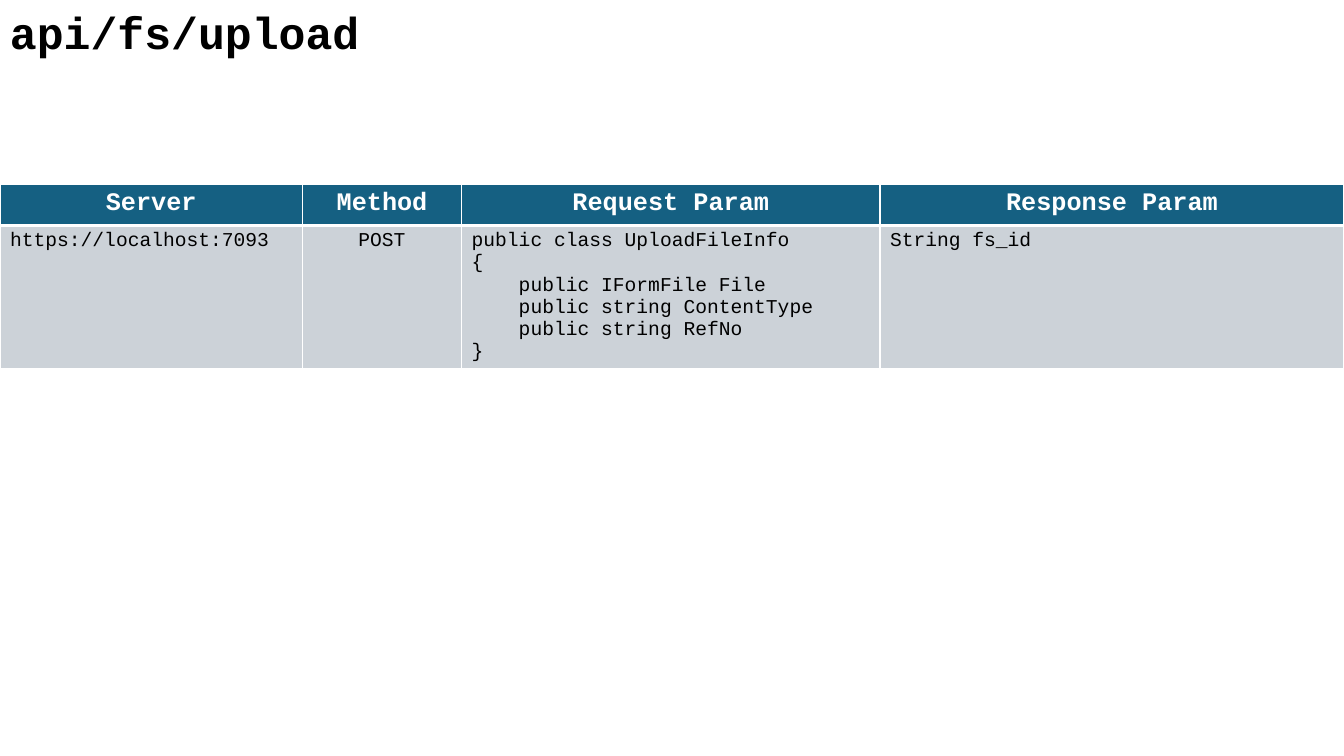
from lxml.etree import SubElement
from pptx import Presentation
from pptx.dml.color import RGBColor
from pptx.enum.text import MSO_AUTO_SIZE, PP_ALIGN
from pptx.oxml.ns import qn
from pptx.util import Pt

FONT = "Courier New"
COLORS = {"header": "156082", "body": "CCD2D8", "white": "FFFFFF", "black": "000000"}
COLUMN_WIDTHS = [216, 113.75, 298.8, 331.45]
ROW_HEIGHTS = [29.2, 102]
HEADINGS = ["Server", "Method", "Request Param", "Response Param"]
UPLOAD_CLASS = [
    "public class UploadFileInfo",
    "{",
    "    public IFormFile File",
    "    public string ContentType",
    "    public string RefNo",
    "}",
]
ENDPOINT = [["https://localhost:7093"], ["POST"], UPLOAD_CLASS, ["String fs_id"]]
METHOD_COLUMN = HEADINGS.index("Method")


def write_lines(frame, lines, size, color, bold=False, align=PP_ALIGN.LEFT):
    for index, line in enumerate(lines):
        para = frame.add_paragraph() if index else frame.paragraphs[0]
        para.alignment = align
        span = para.add_run()
        span.text = line
        span.font.name = FONT
        span.font.size = Pt(size)
        span.font.bold = bold
        span.font.color.rgb = RGBColor.from_string(COLORS[color])


def set_borders(cell, bottom):
    """Give a cell white 1 pt borders and a bottom border of its own width."""
    properties = cell._tc.get_or_add_tcPr()
    for side, width in (("L", 1), ("R", 1), ("T", 1), ("B", bottom)):
        line = SubElement(properties, qn(f"a:ln{side}"), w=str(Pt(width)))
        fill = SubElement(line, qn("a:solidFill"))
        SubElement(fill, qn("a:srgbClr"), val=COLORS["white"])


def fill_cell(cell, fill, bottom):
    set_borders(cell, bottom)
    cell.fill.solid()
    cell.fill.fore_color.rgb = RGBColor.from_string(COLORS[fill])


def add_title(page, text):
    box = page.shapes.add_textbox(Pt(0), Pt(0), Pt(460), Pt(46))
    frame = box.text_frame
    frame.word_wrap = True
    frame.auto_size = MSO_AUTO_SIZE.SHAPE_TO_FIT_TEXT
    write_lines(frame, [text], 32, "black", bold=True)


def add_endpoint_table(page):
    table = page.shapes.add_table(
        len(ROW_HEIGHTS), len(COLUMN_WIDTHS), Pt(0), Pt(131.8),
        Pt(sum(COLUMN_WIDTHS)), Pt(sum(ROW_HEIGHTS)),
    ).table
    for row, height in zip(table.rows, ROW_HEIGHTS):
        row.height = Pt(height)
    for index, width in enumerate(COLUMN_WIDTHS):
        table.columns[index].width = Pt(width)
        heading, detail = table.cell(0, index), table.cell(1, index)
        fill_cell(heading, "header", bottom=3)
        write_lines(heading.text_frame, [HEADINGS[index]], 18, "white",
                    bold=True, align=PP_ALIGN.CENTER)
        fill_cell(detail, "body", bottom=1)
        align = PP_ALIGN.CENTER if index == METHOD_COLUMN else PP_ALIGN.LEFT
        write_lines(detail.text_frame, ENDPOINT[index], 14, "black", align=align)


def main():
    deck = Presentation()
    deck.slide_width, deck.slide_height = Pt(960), Pt(540)
    page = deck.slides.add_slide(deck.slide_layouts[6])
    add_endpoint_table(page)
    add_title(page, "api/fs/upload")
    deck.save("out.pptx")


if __name__ == "__main__":
    main()
